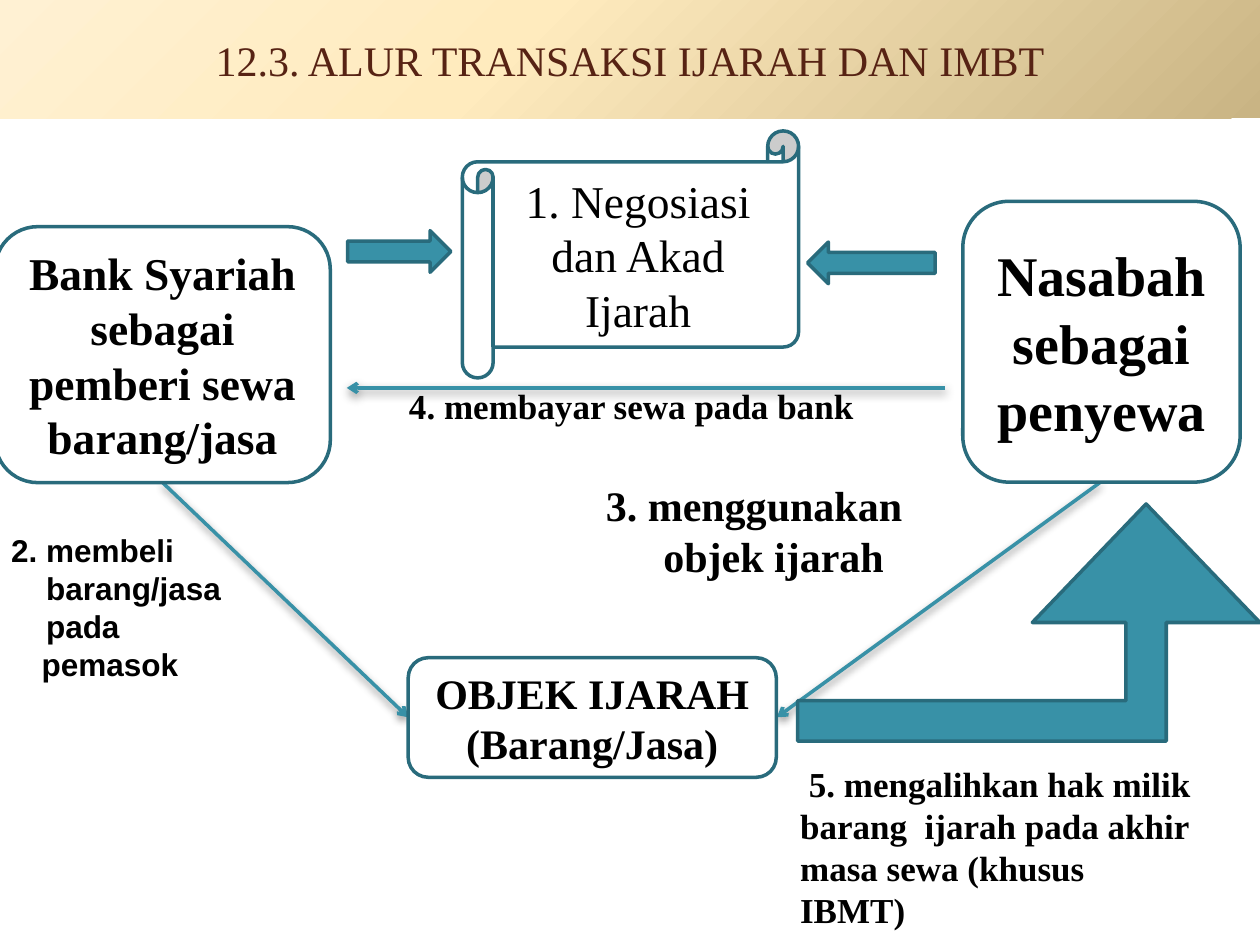
from dataclasses import dataclass

from lxml.etree import SubElement
from pptx import Presentation
from pptx.dml.color import RGBColor
from pptx.enum.shapes import MSO_CONNECTOR, MSO_SHAPE
from pptx.enum.text import MSO_ANCHOR, PP_ALIGN
from pptx.oxml.ns import qn
from pptx.util import Cm, Pt


@dataclass(frozen=True)
class Theme:
    serif: str = "Times New Roman"
    sans: str = "Arial"
    title: str = "572314"
    text: str = "000000"
    paper: str = "FFFFFF"
    accent: str = "3891A7"
    outline: str = "296B7C"
    banner: tuple = ((0, "FFF1D3"), (40, "FFEBBE"), (100, "C9B484"))
    line_width: float = 2
    small: int = 18
    label: int = 20
    heading: int = 24
    party: int = 26
    large: int = 32


THEME = Theme()


@dataclass(frozen=True)
class Area:
    """Position and size in centimetres."""
    left: float
    top: float
    width: float
    height: float

    def lengths(self) -> tuple:
        return Cm(self.left), Cm(self.top), Cm(self.width), Cm(self.height)


@dataclass(frozen=True)
class Box:
    area: Area
    kind: MSO_SHAPE
    text: str
    size: int
    bold: bool = True


@dataclass(frozen=True)
class BlockArrow:
    area: Area
    kind: MSO_SHAPE
    adjustments: tuple = ()


@dataclass(frozen=True)
class Flow:
    """Thin arrow; both ends are x, y in centimetres."""
    begin: tuple
    end: tuple


@dataclass(frozen=True)
class Label:
    """Free text; each indent is the first-line offset of one paragraph."""
    area: Area
    text: str
    size: int
    font: str = THEME.serif
    align: PP_ALIGN = PP_ALIGN.LEFT
    wrap: bool = True
    margin: float = 0
    indents: tuple = ()


FLOWS = (
    Flow((3.28, 9.73), (8.23, 14.46)),
    Flow((22.17, 9.73), (15.66, 14.46)),
    Flow((19.05, 7.82), (6.99, 7.82)),
)
BLOCK_ARROWS = (
    BlockArrow(Area(7.01, 4.65, 2.08, 0.84), MSO_SHAPE.RIGHT_ARROW),
    BlockArrow(Area(16.28, 4.88, 2.57, 0.84), MSO_SHAPE.LEFT_ARROW),
    BlockArrow(Area(16.08, 10.16, 9.32, 4.78), MSO_SHAPE.BENT_UP_ARROW, (0.17, 0.48, 0.5)),
)
LABELS = (
    Label(Area(-0.43, 10.59, 5.72, 3.33), " 2. membeli\nbarang/jasa\npada pemasok",
          THEME.small, font=THEME.sans, margin=1.02, indents=(-0.79, 0.09, 0.09)),
    Label(Area(7.82, 7.62, 9.98, 1.12), " 4. membayar sewa pada bank", THEME.label, wrap=False),
    Label(Area(15.88, 15.24, 8.46, 3.68),
          " 5. mengalihkan hak milik barang  ijarah pada akhir masa sewa (khusus IBMT)",
          THEME.label),
    Label(Area(11.63, 9.55, 6.91, 2.31), "3. menggunakan objek ijarah", THEME.heading,
          align=PP_ALIGN.CENTER, margin=1.02, indents=(-0.79,)),
)
BOXES = (
    Box(Area(9.32, 2.64, 6.78, 4.98), MSO_SHAPE.HORIZONTAL_SCROLL,
        "1. Negosiasi dan Akad Ijarah", THEME.party, bold=False),
    Box(Area(8.23, 13.26, 7.42, 2.41), MSO_SHAPE.ROUNDED_RECTANGLE,
        "OBJEK IJARAH (Barang/Jasa)", THEME.heading),
    Box(Area(19.41, 4.06, 5.59, 5.66), MSO_SHAPE.ROUNDED_RECTANGLE,
        "Nasabah sebagai penyewa", THEME.large),
    Box(Area(-0.1, 4.57, 6.76, 5.16), MSO_SHAPE.ROUNDED_RECTANGLE,
        "Bank Syariah sebagai pemberi sewa barang/jasa", THEME.party),
)


def write_text(shape, text: str, size: int, bold: bool = True, font: str = THEME.serif,
               color: str = THEME.text, align: PP_ALIGN = PP_ALIGN.CENTER) -> None:
    shape.text_frame.text = text
    shape.text_frame.word_wrap = True
    for paragraph in shape.text_frame.paragraphs:
        paragraph.alignment = align
        for run in paragraph.runs:
            run.font.name = font
            run.font.size = Pt(size)
            run.font.bold = bold
            run.font.color.rgb = RGBColor.from_string(color)


def add_filled_shape(slide, kind: MSO_SHAPE, area: Area, fill: str):
    shape = slide.shapes.add_shape(kind, *area.lengths())
    shape.shadow.inherit = False
    shape.fill.solid()
    shape.fill.fore_color.rgb = RGBColor.from_string(fill)
    shape.line.color.rgb = RGBColor.from_string(THEME.outline)
    shape.line.width = Pt(THEME.line_width)
    return shape


def add_banner(slide, text: str) -> None:
    banner = add_filled_shape(slide, MSO_SHAPE.RECTANGLE, Area(0, 0, 25.4, 2.39), THEME.paper)
    banner.line.fill.background()
    banner.fill.gradient()
    gradient = banner.element.spPr.find(qn("a:gradFill"))
    for child in list(gradient):
        gradient.remove(child)
    stops = SubElement(gradient, qn("a:gsLst"))
    for position, color in THEME.banner:
        stop = SubElement(stops, qn("a:gs"), pos=str(position * 1000))
        SubElement(stop, qn("a:srgbClr"), val=color)
    circle = SubElement(gradient, qn("a:path"), path="circle")
    SubElement(circle, qn("a:fillToRect"), l="-24000", t="-20000", r="124000", b="120000")
    write_text(banner, text, THEME.heading, bold=False, color=THEME.title)
    banner.text_frame.vertical_anchor = MSO_ANCHOR.MIDDLE


def add_flow(slide, flow: Flow) -> None:
    ends = [Cm(value) for value in flow.begin + flow.end]
    connector = slide.shapes.add_connector(MSO_CONNECTOR.STRAIGHT, *ends)
    connector.line.color.rgb = RGBColor.from_string(THEME.accent)
    connector.line.width = Pt(THEME.line_width)
    SubElement(connector.line._get_or_add_ln(), qn("a:tailEnd"), type="arrow")
    effects = SubElement(connector.element.spPr, qn("a:effectLst"))
    shadow = SubElement(effects, qn("a:outerShdw"), blurRad=str(Pt(5)), dist=str(Pt(2)),
                        dir="5400000", rotWithShape="0")
    color = SubElement(shadow, qn("a:srgbClr"), val="000000")
    SubElement(color, qn("a:alpha"), val="43000")


def add_block_arrow(slide, arrow: BlockArrow) -> None:
    shape = add_filled_shape(slide, arrow.kind, arrow.area, THEME.accent)
    for index, value in enumerate(arrow.adjustments):
        shape.adjustments[index] = value


def add_label(slide, label: Label) -> None:
    shape = slide.shapes.add_textbox(*label.area.lengths())
    write_text(shape, label.text, label.size, font=label.font, align=label.align)
    shape.text_frame.word_wrap = label.wrap
    for paragraph, indent in zip(shape.text_frame.paragraphs, label.indents):
        properties = paragraph._p.get_or_add_pPr()
        properties.set("marL", str(Cm(label.margin)))
        properties.set("indent", str(Cm(indent)))


def add_box(slide, box: Box) -> None:
    shape = add_filled_shape(slide, box.kind, box.area, THEME.paper)
    write_text(shape, box.text, box.size, box.bold)
    shape.text_frame.vertical_anchor = MSO_ANCHOR.MIDDLE


def main() -> None:
    presentation = Presentation()
    presentation.slide_width, presentation.slide_height = Cm(25.4), Cm(19.05)
    slide = presentation.slides.add_slide(presentation.slide_layouts[6])
    add_banner(slide, "12.3. ALUR TRANSAKSI IJARAH DAN IMBT")
    for draw, items in ((add_flow, FLOWS), (add_block_arrow, BLOCK_ARROWS),
                        (add_label, LABELS), (add_box, BOXES)):
        for item in items:
            draw(slide, item)
    presentation.save("out.pptx")


if __name__ == "__main__":
    main()
